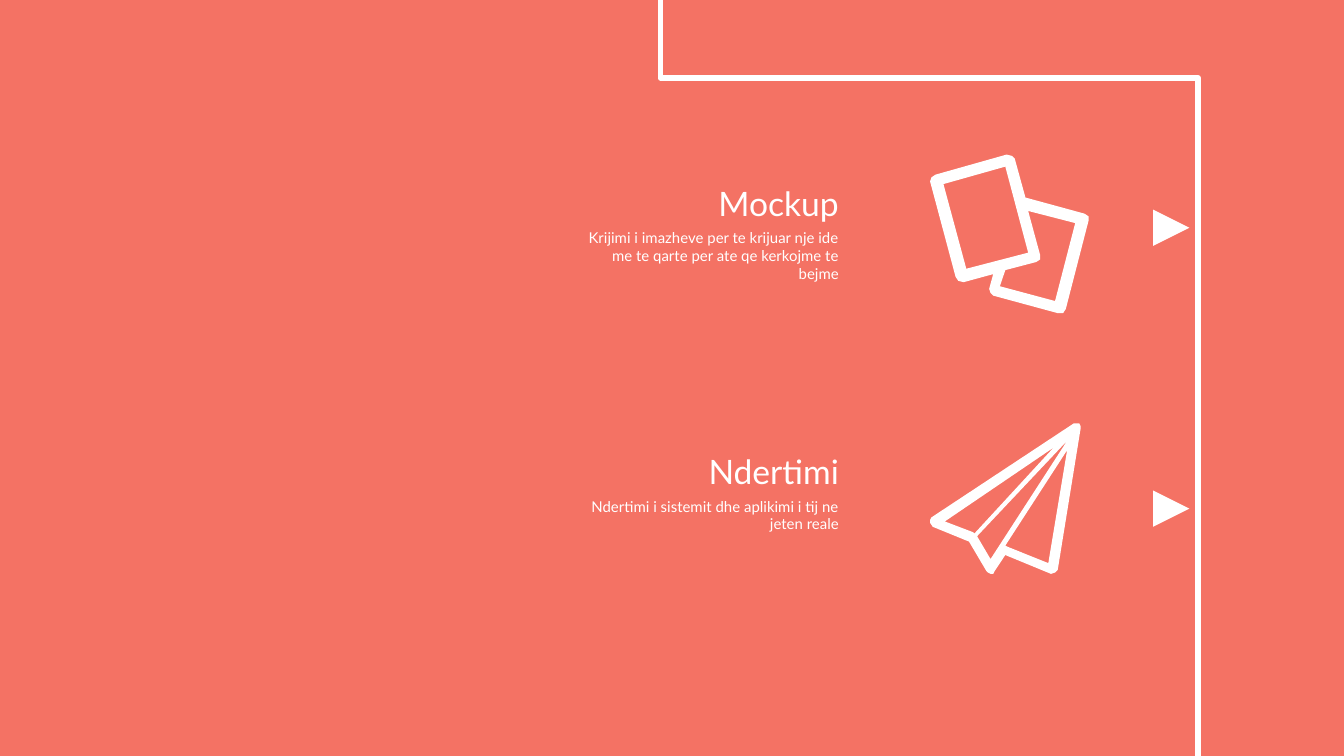
from lxml import etree
from pptx import Presentation
from pptx.dml.color import RGBColor
from pptx.enum import shapes, text
from pptx.oxml import ns
from pptx.util import Inches, Pt

CORAL = RGBColor(0xF4, 0x72, 0x64)
WHITE = RGBColor(0xFF, 0xFF, 0xFF)

CARDS_ICON = [
    [(8.07, 1.59), (7.63, 1.47), (7.55, 1.18), (7.53, 1.16), (7.49, 1.15), (6.96, 1.3),
     (6.93, 1.32), (6.92, 1.35), (7.11, 2.06), (7.13, 2.09), (7.17, 2.1), (7.39, 2.04),
     (7.36, 2.15), (7.37, 2.18), (7.39, 2.2), (7.87, 2.33), (7.91, 2.33), (7.93, 2.3),
     (8.1, 1.64), (8.1, 1.61)],
    [(7.02, 1.37), (7.48, 1.24), (7.65, 1.88), (7.19, 2)],
    [(7.85, 2.24), (7.44, 2.13), (7.48, 2.01), (7.71, 1.95), (7.74, 1.93), (7.74, 1.9),
     (7.65, 1.57), (8, 1.66)],
]
PLANE_ICON = [
    [(8.03, 3.15), (8.01, 3.15), (7.99, 3.15), (6.93, 3.85), (6.92, 3.87), (6.92, 3.89),
     (6.94, 3.92), (7.21, 4.03), (7.34, 4.25), (7.35, 4.26), (7.37, 4.27), (7.39, 4.27),
     (7.4, 4.25), (7.48, 4.13), (7.82, 4.27), (7.85, 4.26), (7.87, 4.24), (8.04, 3.19),
     (8.04, 3.17)],
    [(7.8, 4.19), (7.5, 4.07), (7.48, 4.06), (7.94, 3.35)],
    [(7.27, 3.99), (7.94, 3.28), (7.37, 4.16)],
    [(7.03, 3.88), (7.84, 3.33), (7.25, 3.97), (7.24, 3.96)],
]
# heading, description, heading top, description top and height, arrow top, icon
STEPS = [
    ("Mockup", "Krijimi i imazheve per te krijuar nje ide me te qarte per ate qe kerkojme te bejme",
     1.31, 1.65, 0.5, 1.56, CARDS_ICON),
    ("Ndertimi", "Ndertimi i sistemit dhe aplikimi i tij ne jeten reale",
     3.31, 3.65, 0.37, 3.65, PLANE_ICON),
]


def paint_white(shape):
    shape.shadow.inherit = False
    shape.fill.solid()
    shape.fill.fore_color.rgb = WHITE
    shape.line.fill.background()


def add_label(wording, left, top, width, height, size, space_before):
    """Add a right-aligned white text box."""
    box = slide.shapes.add_textbox(Inches(left), Inches(top), Inches(width), Inches(height))
    box.text_frame.word_wrap = True
    box.text_frame.auto_size = text.MSO_AUTO_SIZE.SHAPE_TO_FIT_TEXT
    paragraph = box.text_frame.paragraphs[0]
    paragraph.alignment = text.PP_ALIGN.RIGHT
    if space_before:
        paragraph.space_before = Pt(space_before)
    run = paragraph.add_run()
    run.text = wording
    for name, value in {"name": "Lato", "size": Pt(size)}.items():
        setattr(run.font, name, value)
    run.font.color.rgb = WHITE


presentation = Presentation()
presentation.slide_width = Inches(10)
presentation.slide_height = Inches(10) * 9 // 16
slide = presentation.slides.add_slide(presentation.slide_layouts[6])
slide.background.fill.solid()
slide.background.fill.fore_color.rgb = CORAL

# The elbow is turned so that it runs down, across and down again
route = slide.shapes.add_connector(
    shapes.MSO_CONNECTOR.ELBOW, Inches(9.73), Inches(0.81), Inches(4.1), Inches(4.81))
route.line.color.rgb = WHITE
route.line.width = Pt(3)
properties = route._element.spPr
properties.find(ns.qn("a:xfrm")).set("rot", str(270 * 60000))
adjustments = properties.find(ns.qn("a:prstGeom")).get_or_add_avLst()
etree.SubElement(adjustments, ns.qn("a:gd"), name="adj1", fmla="val 10400")
etree.SubElement(properties, ns.qn("a:effectLst"))

for heading, description, heading_top, top, height, arrow_top, icon in STEPS:
    builder = None
    for contour in icon:
        points = [(Inches(x), Inches(y)) for x, y in contour]
        if builder is None:
            builder = slide.shapes.build_freeform(*points[0])
        else:
            builder.move_to(*points[0])
        builder.add_line_segments(points[1:], close=True)
    paint_white(builder.convert_to_shape())

    arrow = slide.shapes.add_shape(
        shapes.MSO_SHAPE.FLOWCHART_EXTRACT,
        Inches(8.58), Inches(arrow_top), Inches(0.27), Inches(0.27))
    arrow.rotation = 90
    paint_white(arrow)

    add_label(description, 4.17, top, 2.17, height, 8, 2.1)
    add_label(heading, 5, heading_top, 1.34, 0.4, 18, 0)

presentation.save("out.pptx")
